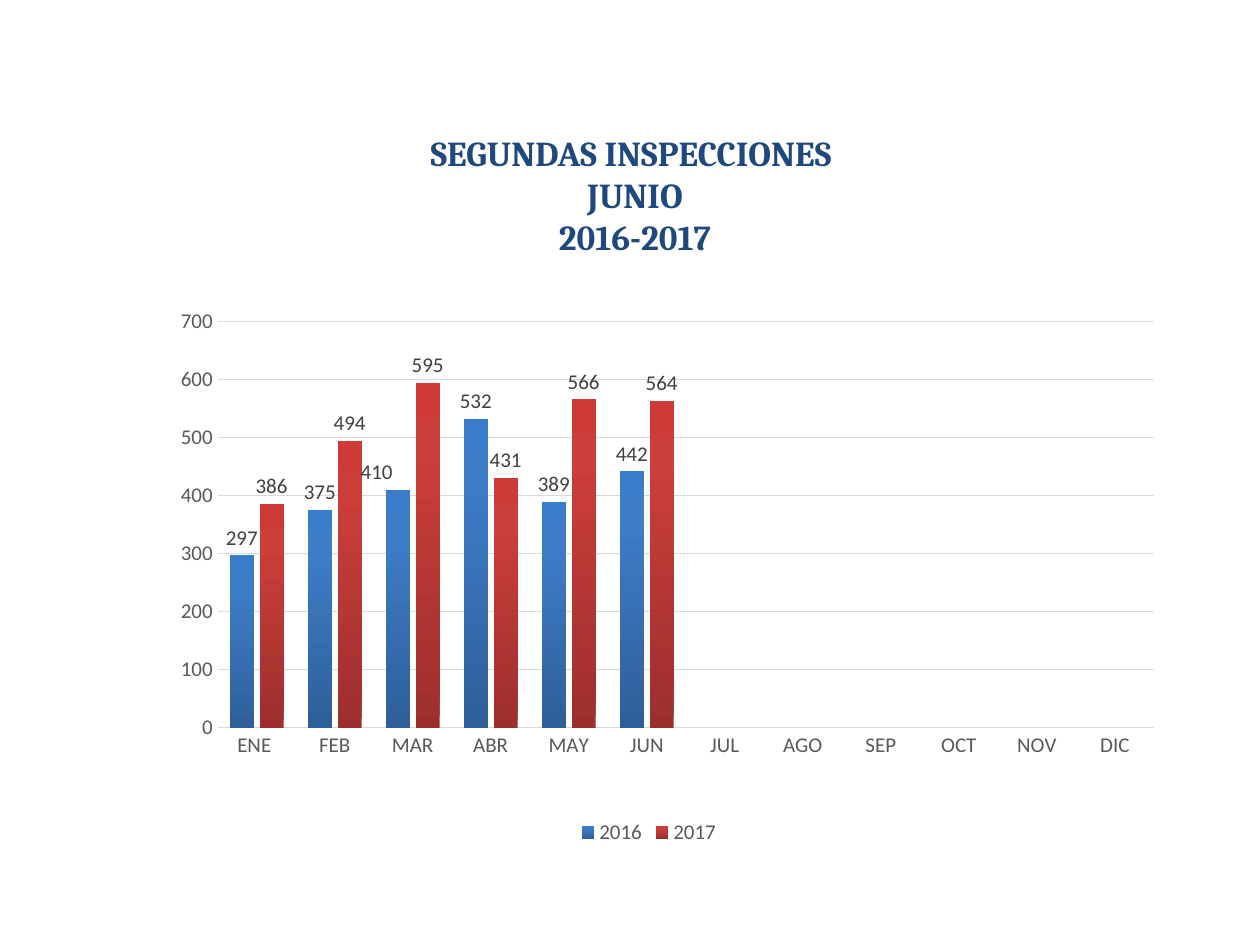
import pptx
import pptx.chart.data
import pptx.dml.color
import pptx.enum.chart
import pptx.enum.text
import pptx.oxml
import pptx.oxml.ns
import pptx.util

PX = 914400 // 126

MONTHS = ["ENE ", "FEB", "MAR", "ABR", "MAY", "JUN",
          "JUL", "AGO", "SEP", "OCT", "NOV", "DIC"]
YEARS = {
    "2016": ([297, 375, 410, 532, 389, 442], ["2F5F99", "3D7CC7", "3A7CCB"]),
    "2017": ([386, 494, 595, 431, 566, 564], ["9C2F2D", "CB3E3A", "CE3B37"]),
}


def paint(code):
    return pptx.dml.color.RGBColor.from_string(code)


def assign(item, values):
    for name, value in values.items():
        setattr(item, name, value)


def build(tag, body):
    """Parse an XML element that uses the chart and drawing namespaces."""
    names = pptx.oxml.ns.nsdecls("c", "a")
    return pptx.oxml.parse_xml(f"<{tag} {names}>{body}</{tag}>")


def layout(**values):
    """Make a manual chart layout from its parts, given in schema order."""
    parts = "".join(f'<c:{key} val="{val}"/>' for key, val in values.items())
    return build("c:layout", f"<c:manualLayout>{parts}</c:manualLayout>")


class Deck:
    """Holds the style and the current slide."""

    def __init__(self, wide, high):
        self.show = pptx.Presentation()
        self.show.slide_width = wide * PX
        self.show.slide_height = high * PX
        self.slide = self.show.slides.add_slide(self.show.slide_layouts[5])
        self.head = {"name": "Cambria", "size": pptx.util.Pt(20), "bold": True}
        self.body = {"name": "Calibri", "size": pptx.util.Pt(12), "bold": False}

    def style(self, font, form, color):
        assign(font, form)
        font.color.rgb = paint(color)

    def title(self, lines, left, top, width, height):
        shape = self.slide.shapes.title
        assign(shape, {"left": left * PX, "top": top * PX,
                       "width": width * PX, "height": height * PX})
        frame = shape.text_frame
        frame.text = "\n".join(lines)
        assign(frame, {"word_wrap": True,
                       "auto_size": pptx.enum.text.MSO_AUTO_SIZE.SHAPE_TO_FIT_TEXT,
                       "vertical_anchor": pptx.enum.text.MSO_ANCHOR.TOP})
        for line in frame.paragraphs:
            line.alignment = pptx.enum.text.PP_ALIGN.CENTER
            self.style(line.runs[0].font, self.head, "1F497D")

    def columns(self, left, top, width, height):
        data = pptx.chart.data.CategoryChartData()
        data.categories = MONTHS
        for year, (counts, _) in YEARS.items():
            data.add_series(year, counts + [None] * (len(MONTHS) - len(counts)))
        chart = self.slide.shapes.add_chart(
            pptx.enum.chart.XL_CHART_TYPE.COLUMN_CLUSTERED,
            left * PX, top * PX, width * PX, height * PX, data).chart
        self.style(chart.font, self.body, "595959")
        assign(chart, {"has_title": False, "has_legend": True})
        assign(chart.legend, {"include_in_layout": False,
                              "position": pptx.enum.chart.XL_LEGEND_POSITION.BOTTOM})
        self.style(chart.legend.font, self.body, "595959")
        self.axes(chart)
        self.area(chart)
        assign(chart.plots[0], {"gap_width": 100, "overlap": -24,
                                "vary_by_categories": False})
        for series in chart.plots[0].series:
            self.blend(series, YEARS[series.name][1])
            self.labels(series.data_labels)
        self.shift(chart.plots[0].series[0], 2, -0.02)

    def axes(self, chart):
        none = pptx.enum.chart.XL_TICK_MARK.NONE
        for axis in (chart.category_axis, chart.value_axis):
            assign(axis, {"major_tick_mark": none, "minor_tick_mark": none})
            self.style(axis.tick_labels.font, self.body, "595959")
        chart.category_axis.has_major_gridlines = False
        scale = chart.value_axis
        assign(scale, {"minimum_scale": 0, "maximum_scale": 700,
                       "major_unit": 100, "has_major_gridlines": True})
        scale.format.line.fill.background()
        for part, size in ((chart.category_axis, 1), (scale.major_gridlines, 0.75)):
            part.format.line.color.rgb = paint("D9D9D9")
            part.format.line.width = pptx.util.Pt(size)

    def area(self, chart):
        """Fix the inner plot area inside the chart."""
        plot = chart.element.xpath(".//c:plotArea")[0]
        for old in plot.xpath("./c:layout"):
            plot.remove(old)
        plot.insert(0, layout(layoutTarget="inner", xMode="edge", yMode="edge",
                              x=0.09, y=0.05, w=0.89, h=0.73))

    def blend(self, series, codes):
        """Fill the bars with a gradient that runs from the bottom up."""
        fill = series.format.fill
        fill.gradient()
        fill.gradient_angle = 90
        stops = series.format.element.xpath(".//a:gsLst")[0] if hasattr(
            series.format, "element") else series._element.xpath(".//a:gsLst")[0]
        for old in list(stops):
            stops.remove(old)
        for place, code in zip((0, 80, 100), codes):
            stop = build("a:gs", f'<a:srgbClr val="{code}"/>')
            stop.set("pos", str(place * 1000))
            stops.append(stop)

    def labels(self, labels):
        assign(labels, {"show_value": True,
                        "position": pptx.enum.chart.XL_LABEL_POSITION.OUTSIDE_END})
        self.style(labels.font, self.body, "404040")

    def shift(self, series, index, share):
        """Move one label sideways by a share of the chart width."""
        label = series.points[index].data_label
        self.style(label.font, self.body, "404040")
        label.position = pptx.enum.chart.XL_LABEL_POSITION.OUTSIDE_END
        mark = series._element.xpath(f"./c:dLbls/c:dLbl/c:idx[@val='{index}']")[0]
        mark.addnext(layout(x=share, y=0))


def main():
    deck = Deck(1260, 945)
    deck.columns(123, 294, 1052, 556)
    deck.title(["SEGUNDAS INSPECCIONES ", "JUNIO", "2016-2017"],
               174, 125, 922, 140)
    deck.show.save("out.pptx")


if __name__ == "__main__":
    main()
